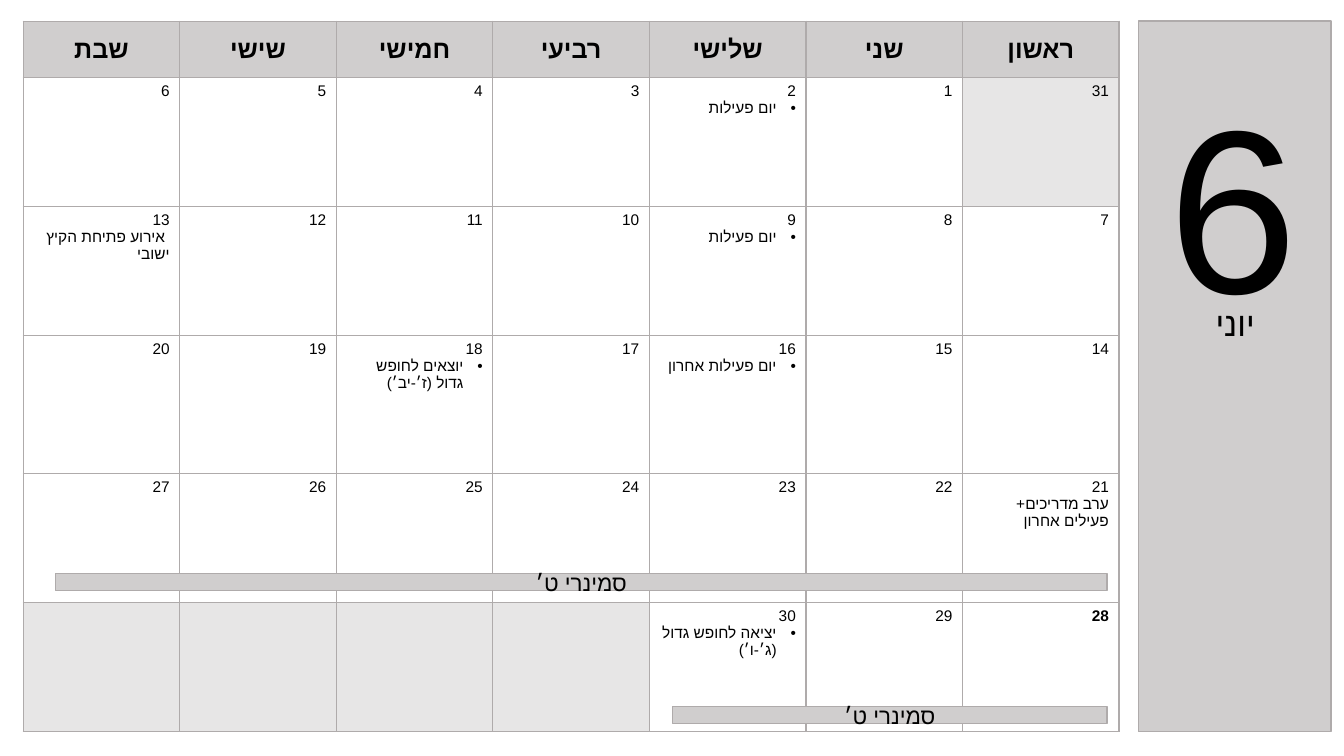
"""Build a one-page Hebrew calendar slide for June."""
from lxml.etree import SubElement
from pptx import Presentation
from pptx.dml.color import RGBColor
from pptx.enum.shapes import MSO_SHAPE
from pptx.enum.text import MSO_ANCHOR, PP_ALIGN
from pptx.oxml.ns import qn
from pptx.util import Inches, Pt

COLOURS = {"panel": "D0CECE", "line": "AFABAB", "outside": "E7E6E6", "text": "000000"}
WEEKDAYS = ["שבת", "שישי", "חמישי", "רביעי", "שלישי", "שני", "ראשון"]
ROW_HEIGHTS = [0.56, 1.28, 1.28, 1.37, 1.28, 1.28]
COLUMN_WIDTH = 10.87 / 7
BULLETED = {
    2: "יום פעילות",
    9: "יום פעילות",
    16: "יום פעילות אחרון",
    18: "יוצאים לחופש גדול (ז׳-יב׳)",
    30: "יציאה לחופש גדול (ג׳-ו׳)",
}
PLAIN = {13: " אירוע פתיחת הקיץ ישובי", 21: "ערב מדריכים+ פעילים אחרון"}
BARS = [(0.55, 5.69, 10.43), (6.67, 7.01, 4.31)]


def write(para, text, size, align=PP_ALIGN.CENTER, bold=False, bullet=False):
    para.alignment = align
    properties = para._p.get_or_add_pPr()
    properties.set("rtl", "1")
    if bullet:
        properties.set("marL", str(Inches(0.19)))
        properties.set("indent", str(Inches(-0.19)))
        SubElement(properties, qn("a:buFont"), typeface="Arial")
        SubElement(properties, qn("a:buChar"), char="•")
    span = para.add_run()
    span.text = text
    formats = {"name": "Calibri", "size": Pt(size), "bold": bold}
    for name, value in formats.items():
        setattr(span.font, name, value)
    span.font.color.rgb = RGBColor.from_string(COLOURS["text"])
    span._r.rPr.set("lang", "he-IL")
    SubElement(span._r.rPr, qn("a:cs"), typeface="Arial")


def add_panel(left, top, width, height):
    box = page.shapes.add_shape(
        MSO_SHAPE.RECTANGLE, Inches(left), Inches(top), Inches(width), Inches(height))
    box.shadow.inherit = False
    box.fill.solid()
    box.fill.fore_color.rgb = RGBColor.from_string(COLOURS["panel"])
    box.line.color.rgb = RGBColor.from_string(COLOURS["line"])
    box.line.width = Pt(1)
    return box


deck = Presentation()
deck.slide_width, deck.slide_height = Inches(13.33), Inches(7.5)
page = deck.slides.add_slide(deck.slide_layouts[5])

add_panel(11.29, 0.21, 1.91, 7.05)
number = page.shapes.add_textbox(Inches(11.53), Inches(0.56), Inches(1.44), Inches(2.89))
number.text_frame.word_wrap = True
write(number.text_frame.paragraphs[0], "6", 166)

month = page.shapes.title
place = {"left": 11.53, "top": 2.95, "width": 1.44, "height": 0.5}
for name, value in place.items():
    setattr(month, name, Inches(value))
month.text_frame.vertical_anchor = MSO_ANCHOR.TOP
write(month.text_frame.paragraphs[0], "יוני", 24)
page.shapes._spTree.append(month._element)

frame = page.shapes.add_table(
    6, 7, Inches(0.23), Inches(0.21), Inches(10.87), Inches(7.05))
calendar = frame.table
calendar.first_row = calendar.horz_banding = False
for column in calendar.columns:
    column.width = Inches(COLUMN_WIDTH)
for row, height in zip(calendar.rows, ROW_HEIGHTS):
    row.height = Inches(height)

for week in range(6):
    for column, weekday in enumerate(WEEKDAYS):
        cell = calendar.cell(week, column)
        day = 7 * (week - 1) + 6 - column
        first = cell.text_frame.paragraphs[0]
        fill = None
        if week == 0:
            fill = "panel"
            cell.vertical_anchor = MSO_ANCHOR.MIDDLE
            write(first, weekday, 18, bold=True)
        elif day > 30:
            fill = "outside"
        else:
            fill = None if day else "outside"
            write(first, str(day or 31), 11, PP_ALIGN.RIGHT, bold=day == 28)
            event = BULLETED.get(day) or PLAIN.get(day)
            if event:
                write(cell.text_frame.add_paragraph(), event, 11,
                      PP_ALIGN.RIGHT, bullet=day in BULLETED)

        cell_properties = cell._tc.get_or_add_tcPr()
        for side in ("lnL", "lnR", "lnT", "lnB"):
            border = SubElement(cell_properties, qn(f"a:{side}"), w=str(Pt(1)))
            paint = SubElement(border, qn("a:solidFill"))
            SubElement(paint, qn("a:srgbClr"), val=COLOURS["line"])
        if fill:
            cell.fill.solid()
            cell.fill.fore_color.rgb = RGBColor.from_string(COLOURS[fill])
        else:
            cell.fill.background()

for left, top, width in BARS:
    bar = add_panel(left, top, width, 0.17)
    bar.text_frame.vertical_anchor = MSO_ANCHOR.MIDDLE
    write(bar.text_frame.paragraphs[0], "סמינרי ט׳", 16)

deck.save("out.pptx")
